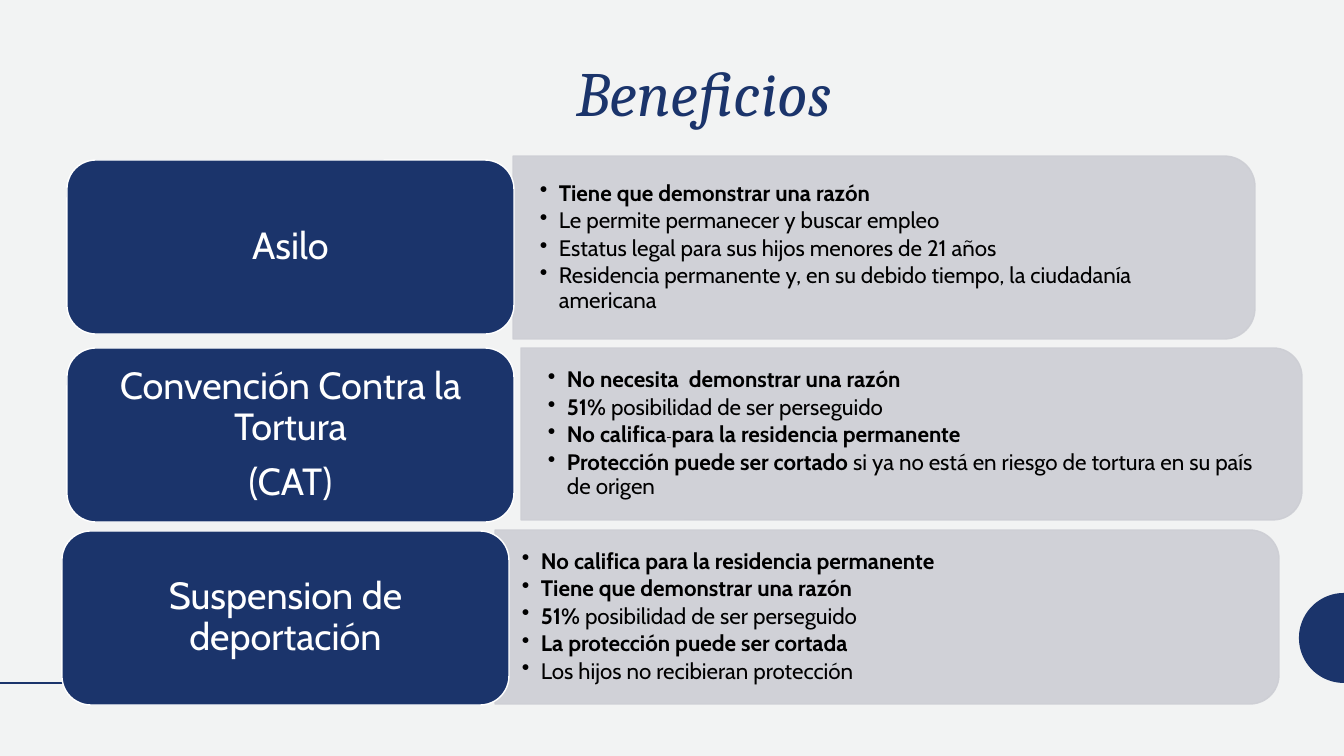
"""Build the "Beneficios" slide: three benefits, each a title card beside a bulleted panel."""
from math import cos, pi, sin

from lxml.etree import SubElement
from pptx import Presentation
from pptx.dml.color import RGBColor
from pptx.enum.shapes import MSO_CONNECTOR, MSO_SHAPE
from pptx.enum.text import MSO_ANCHOR, PP_ALIGN
from pptx.oxml.ns import qn
from pptx.util import Pt

SCALE = 914400 / 100.8
COLORS = {
    "background": "F2F3F3",
    "navy": "1B346B",
    "panel": "CDCED4",
    "white": "FFFFFF",
    "black": "000000",
}
BENEFITS = [
    {
        "title": ["Asilo"],
        "card": (67, 160),
        "panel": (513, 156, 742, 183),
        "points": [
            [("Tiene que demonstrar una razón", "bold")],
            [("Le permite permanecer y buscar empleo", "")],
            [("Estatus legal para sus hijos menores de 21 años", "")],
            [("Residencia permanente y, en su debido tiempo, la ciudadanía americana", "")],
        ],
    },
    {
        "title": ["Convención Contra la Tortura", "(CAT)"],
        "card": (67, 348),
        "panel": (521, 348, 781, 172),
        "points": [
            [("No necesita  demonstrar una razón", "bold")],
            [("51%", "bold"), (" posibilidad de ser perseguido", "")],
            [("No califica", "bold"), (" ", "bold strike"),
             ("para la residencia permanente", "bold")],
            [("Protección puede ser cortado ", "bold"),
             ("si ya no está en riesgo de tortura en su país de origen", "")],
        ],
    },
    {
        "title": ["Suspension de deportación"],
        "card": (62, 531),
        "panel": (495, 530, 784, 174),
        "points": [
            [("No califica para la residencia permanente", "bold")],
            [("Tiene que demonstrar una razón", "bold")],
            [("51%", "bold"), (" posibilidad de ser perseguido", "")],
            [("La protección puede ser cortada", "bold")],
            [("Los hijos no recibieran protección", "")],
        ],
    },
]


def px(*lengths):
    return [round(length * SCALE) for length in lengths]


def write_text(box, paragraphs, *, size, color, font="Cabin", align=PP_ALIGN.LEFT,
               anchor=MSO_ANCHOR.MIDDLE, insets=(10, 5), after=0, italic=False, bullet=False):
    frame = box.text_frame
    frame.word_wrap = True
    frame.vertical_anchor = anchor
    frame.margin_left = frame.margin_right = px(insets[0])[0]
    frame.margin_top = frame.margin_bottom = px(insets[1])[0]
    for index, spans in enumerate(paragraphs):
        para = frame.paragraphs[0] if index == 0 else frame.add_paragraph()
        para.alignment = align
        para.line_spacing = 0.9
        para.space_after = Pt(after)
        if bullet:
            properties = para._p.get_or_add_pPr()
            indent = px(19)[0]
            properties.set("marL", str(indent))
            properties.set("indent", str(-indent))
            SubElement(properties, qn("a:buChar"), char="•")
        for text, style in spans:
            span = para.add_run()
            span.text = text
            span.font.name = font
            span.font.size = Pt(size)
            span.font.bold = "bold" in style
            span.font.italic = italic
            span.font.color.rgb = RGBColor.from_string(COLORS[color])
            if "strike" in style:
                span._r.get_or_add_rPr().set("strike", "sngStrike")


deck = Presentation()
deck.slide_width, deck.slide_height = px(1344, 756)
page = deck.slides.add_slide(deck.slide_layouts[6])
page.background.fill.solid()
page.background.fill.fore_color.rgb = RGBColor.from_string(COLORS["background"])

radius = 45
arc = [(1344 - radius * sin(pi * step / 48), 638 - radius * cos(pi * step / 48))
       for step in range(49)]
builder = page.shapes.build_freeform(*px(*arc[0]))
builder.add_line_segments([px(*point) for point in arc[1:]], close=True)
half_circle = builder.convert_to_shape()
half_circle.shadow.inherit = False
half_circle.fill.solid()
half_circle.fill.fore_color.rgb = RGBColor.from_string(COLORS["navy"])
half_circle.line.fill.background()

rule = page.shapes.add_connector(MSO_CONNECTOR.STRAIGHT, *px(0, 683, 496, 683))
rule.line.color.rgb = RGBColor.from_string(COLORS["navy"])
rule.line.width = Pt(2)
SubElement(rule._element.spPr, qn("a:effectLst"))

heading = page.shapes.add_textbox(*px(526, 57, 315, 62))
write_text(heading, [[("Beneficios", "")]], size=45, color="navy", font="Cambria",
           align=PP_ALIGN.RIGHT, anchor=MSO_ANCHOR.TOP, italic=True)

for benefit in BENEFITS:
    left, top, width, height = benefit["panel"]
    shift = (width - height) / 2
    panel = page.shapes.add_shape(MSO_SHAPE.ROUND_2_SAME_RECTANGLE,
                                  *px(left + shift, top - shift, height, width))
    panel.rotation = 90
    card = page.shapes.add_shape(MSO_SHAPE.ROUNDED_RECTANGLE, *px(*benefit["card"], 447, 174))
    for shape, fill, line in ((panel, "panel", "panel"), (card, "navy", "white")):
        shape.shadow.inherit = False
        shape.fill.solid()
        shape.fill.fore_color.rgb = RGBColor.from_string(COLORS[fill])
        shape.line.color.rgb = RGBColor.from_string(COLORS[line])
        shape.line.width = Pt(1)
    for tint in panel._element.spPr.iter(qn("a:srgbClr")):
        SubElement(tint, qn("a:alpha"), val="90000")
    write_text(card, [[(text, "")] for text in benefit["title"]], size=27, color="white",
               align=PP_ALIGN.CENTER, insets=(11, 6), after=10)
    details = page.shapes.add_textbox(*px(left, top + 8, width - 9, height - 16))
    write_text(details, benefit["points"], size=16, color="black", insets=(27, 14),
               after=2.4, bullet=True)

deck.save("out.pptx")
